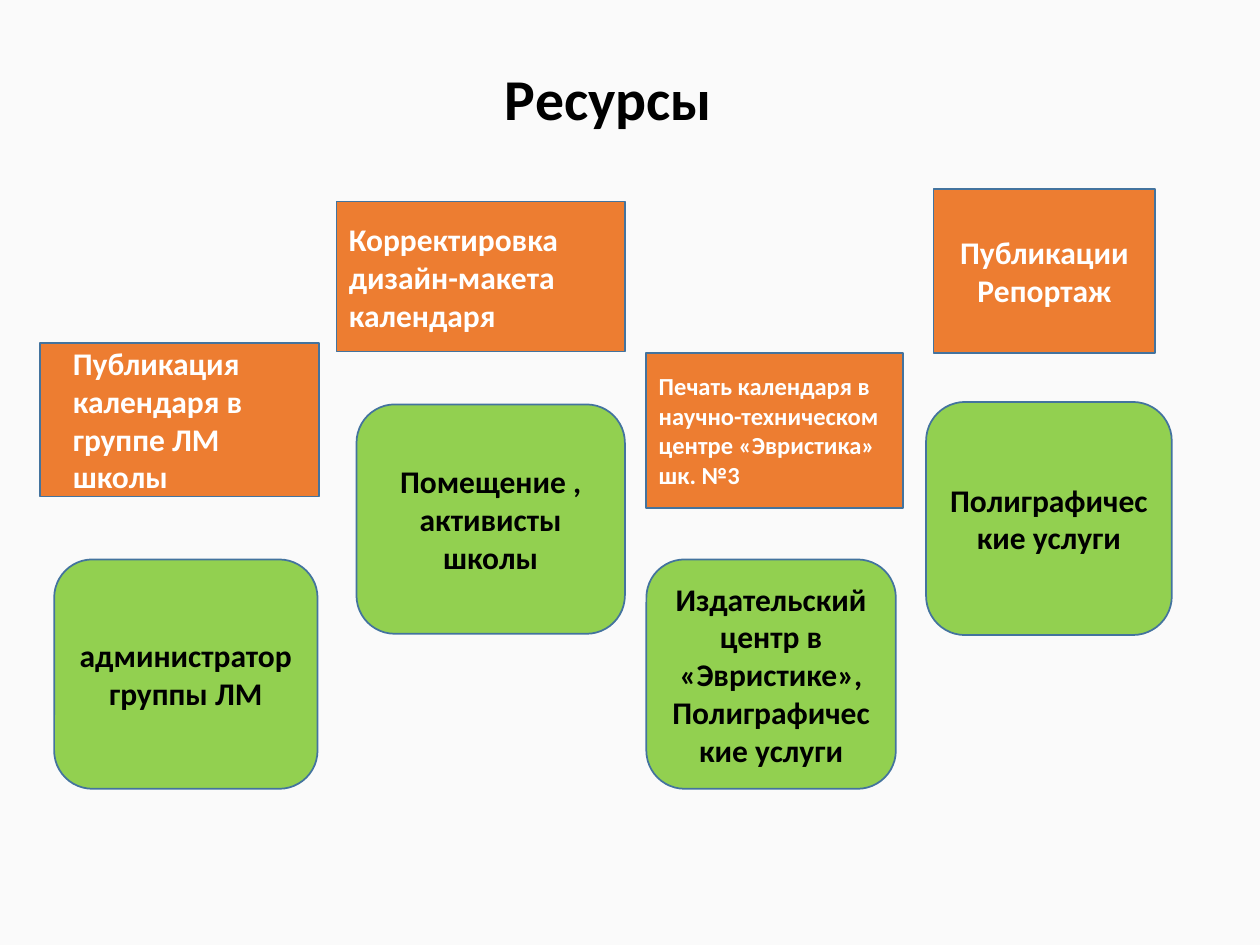
"""Build the resources slide: orange tasks above green resources."""
from pptx import Presentation
from pptx.dml.color import RGBColor as Rgb
from pptx.enum.shapes import MSO_SHAPE as Shape
from pptx.enum.text import MSO_ANCHOR as Anchor, PP_ALIGN as Align
from pptx.util import Inches, Pt

HUES = {"back": "FAFAFA", "task": "ED7D31", "asset": "92D050",
        "edge": "43739E", "light": "FFFFFF", "dark": "000000"}


def hue(name):
    return Rgb.from_string(HUES[name])


def write(frame, lines, size, ink, align):
    frame.word_wrap = True
    frame.vertical_anchor = Anchor.MIDDLE
    for i, line in enumerate(lines):
        para = frame.add_paragraph() if i else frame.paragraphs[0]
        para.alignment = align
        run = para.add_run()
        run.text = line
        font = run.font
        font.name, font.size, font.bold = "Calibri", Pt(size), True
        font.color.rgb = hue(ink)


deck = Presentation()
deck.slide_width, deck.slide_height = Inches(10), Inches(7.5)
slide = deck.slides.add_slide(deck.slide_layouts[6])
fill = slide.background.fill
fill.solid()
fill.fore_color.rgb = hue("back")

title = slide.shapes.add_textbox(Inches(0.69), Inches(0.4), Inches(8.62), Inches(0.81))
frame = title.text_frame
write(frame, ["Ресурсы"], 33, "dark", Align.CENTER)
frame.margin_right = Inches(0.44)
frame.paragraphs[0].line_spacing = 0.9

tasks = [
    ((0.32, 2.72, 2.21, 1.22), ["Публикация календаря в группе ЛМ школы"], 18, Align.LEFT, 0.16),
    ((2.67, 1.6, 2.29, 1.19), ["Корректировка дизайн-макета календаря"], 18, Align.LEFT, 0),
    ((5.13, 2.8, 2.04, 1.23),
     ["Печать календаря в научно-техническом центре «Эвристика» шк. №3"], 14, Align.LEFT, 0),
    ((7.41, 1.5, 1.76, 1.3), ["Публикации Репортаж"], 18, Align.CENTER, 0),
]
assets = [
    ((0.43, 4.44, 2.09, 1.82), ["администратор группы ЛМ"]),
    ((2.83, 3.21, 2.13, 1.82), ["Помещение , активисты школы"]),
    ((5.13, 4.44, 1.98, 1.82),
     ["Издательский центр в «Эвристике»,", "Полиграфические услуги"]),
    ((7.35, 3.19, 1.95, 1.85), ["Полиграфические услуги"]),
]
cards = [(Shape.RECTANGLE, "task", "light", *task) for task in tasks]
cards += [(Shape.ROUNDED_RECTANGLE, "asset", "dark", *asset, 18, Align.CENTER, 0)
          for asset in assets]

for kind, tint, ink, box, lines, size, align, indent in cards:
    card = slide.shapes.add_shape(kind, *map(Inches, box))
    card.shadow.inherit = False
    card.fill.solid()
    card.fill.fore_color.rgb = hue(tint)
    card.line.color.rgb = hue("edge")
    card.line.width = Pt(1)
    write(card.text_frame, lines, size, ink, align)
    if indent:
        card.text_frame.paragraphs[0]._p.get_or_add_pPr().set("marL", str(Inches(indent)))

deck.save("out.pptx")
